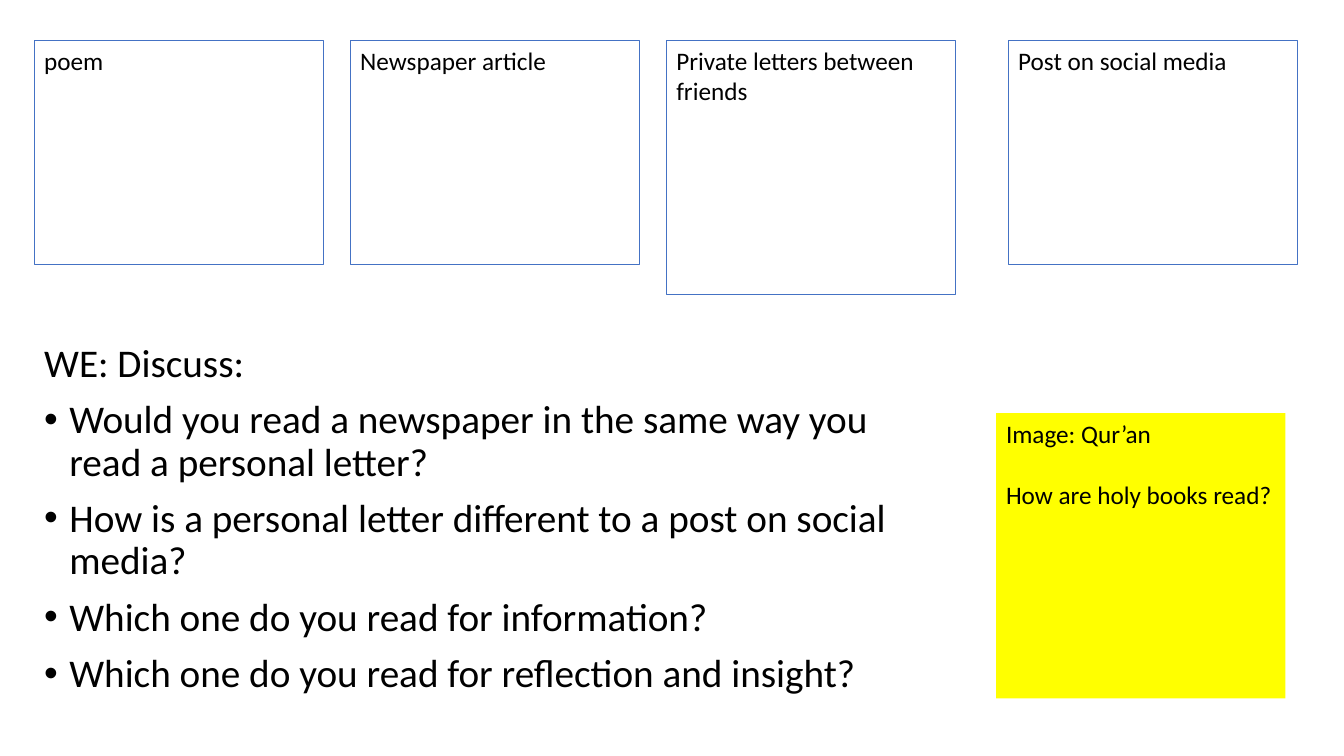
"""Build a discussion slide that compares ways of reading different texts."""
from lxml.etree import SubElement
from pptx import Presentation
from pptx.dml.color import RGBColor
from pptx.enum.shapes import MSO_SHAPE
from pptx.enum.text import MSO_ANCHOR, PP_ALIGN
from pptx.oxml.ns import qn
from pptx.util import Inches, Pt

MARGIN = 0.34
CARD_TOP = 0.4
CARD_WIDTH = 2.87
CARD_HEIGHT = 2.22
CARD_STEP = 3.135
LAST_CARD_LEFT = 10
LINE_HEIGHT = 0.3

TEXT_TYPES = ["poem", "Newspaper article", "Private letters between friends"]
QUESTIONS = [
    "Would you read a newspaper in the same way you read a personal letter?",
    "How is a personal letter different to a post on social media?",
    "Which one do you read for information?",
    "Which one do you read for reflection and insight?",
]


def color(value):
    return RGBColor.from_string(value)


def write_paragraphs(frame, texts, size, space_before):
    frame.word_wrap = True
    frame.vertical_anchor = MSO_ANCHOR.TOP
    for index, text in enumerate(texts):
        paragraph = frame.add_paragraph() if index else frame.paragraphs[0]
        paragraph.text = text
        paragraph.alignment = PP_ALIGN.LEFT
        paragraph.space_before = Pt(space_before if index else 0)
        paragraph.font.name = "Calibri"
        paragraph.font.size = Pt(size)
        paragraph.font.color.rgb = color("000000")


def add_card(slide, left, top, height, texts, fill=None, outline=None):
    card = slide.shapes.add_shape(
        MSO_SHAPE.RECTANGLE, Inches(left), Inches(top), Inches(CARD_WIDTH), Inches(height)
    )
    card.shadow.inherit = False
    if fill:
        card.fill.solid()
        card.fill.fore_color.rgb = color(fill)
    else:
        card.fill.background()
    if outline:
        card.line.color.rgb = color(outline)
        card.line.width = Pt(0.75)
    else:
        card.line.fill.background()
    write_paragraphs(card.text_frame, texts, 18, 22)


def add_bullet(paragraph):
    properties = paragraph._p.get_or_add_pPr()
    properties.set("marL", str(Inches(0.25)))
    properties.set("indent", str(-Inches(0.25)))
    SubElement(properties, qn("a:buFont"), typeface="Arial")
    SubElement(properties, qn("a:buChar"), char="•")


def add_discussion(slide, heading, questions):
    box = slide.shapes.add_textbox(Inches(MARGIN), Inches(3.36), Inches(9.07), Inches(3.9))
    write_paragraphs(box.text_frame, [heading, *questions], 28, 10)
    for paragraph in box.text_frame.paragraphs:
        paragraph.line_spacing = 0.9
    for paragraph in box.text_frame.paragraphs[1:]:
        properties = paragraph._p.get_or_add_pPr()
        default_font = properties.find(qn("a:defRPr"))
        add_bullet(paragraph)
        if default_font is not None:
            properties.append(default_font)


def main():
    presentation = Presentation()
    presentation.slide_width = Inches(13.33)
    presentation.slide_height = Inches(7.5)
    slide = presentation.slides.add_slide(presentation.slide_layouts[6])

    add_discussion(slide, "WE: Discuss:", QUESTIONS)
    holy_books = ["Image: Qur’an", "How are holy books read?"]
    add_card(slide, 9.88, 4.1, 2.83, holy_books, fill="FFFF00")

    cards = [(MARGIN + column * CARD_STEP, text) for column, text in enumerate(TEXT_TYPES)]
    cards.append((LAST_CARD_LEFT, "Post on social media"))
    for left, text in cards:
        extra = LINE_HEIGHT if text == TEXT_TYPES[-1] else 0
        add_card(slide, left, CARD_TOP, CARD_HEIGHT + extra, [text], outline="4472C4")

    presentation.save("out.pptx")


if __name__ == "__main__":
    main()
